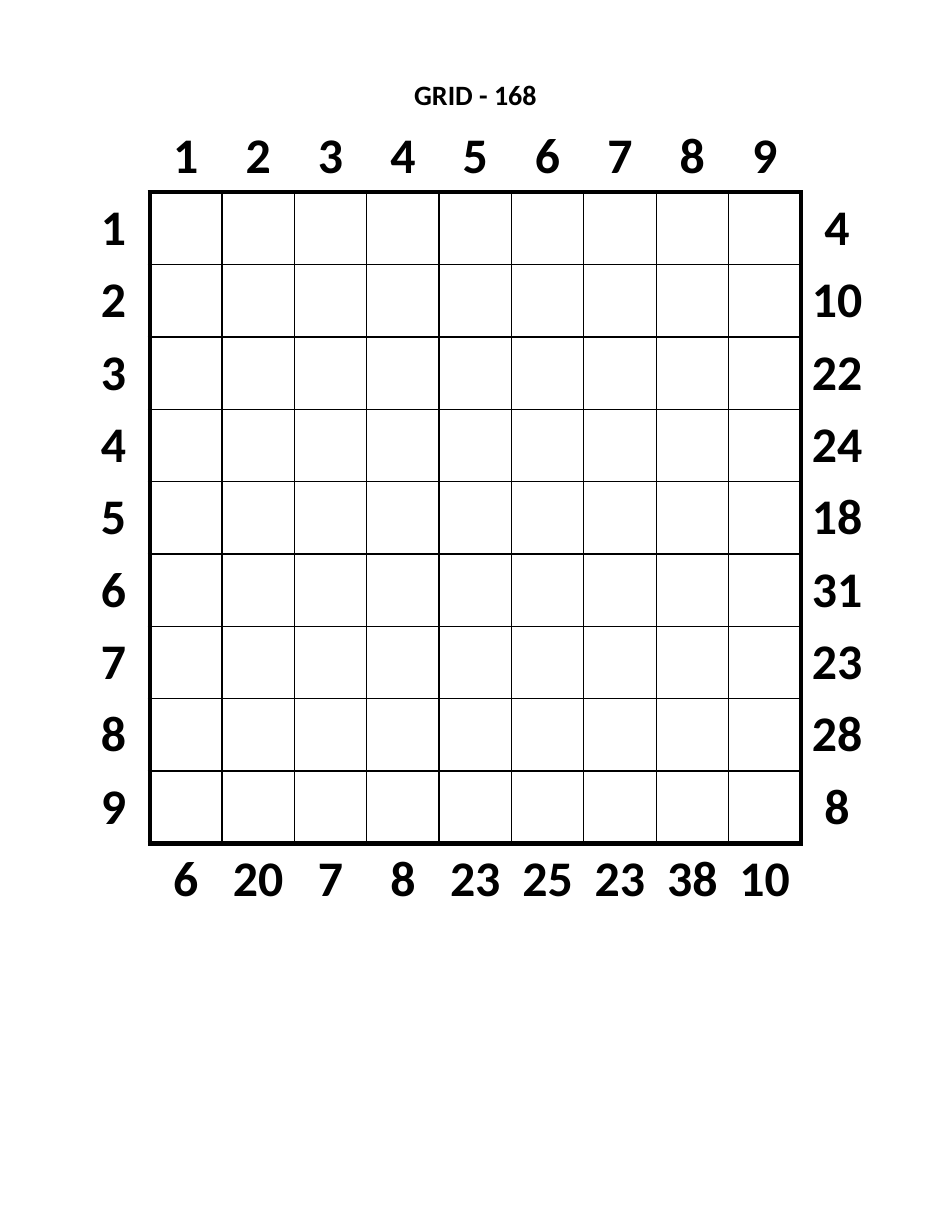
from dataclasses import dataclass
from lxml.etree import SubElement
from pptx import Presentation
from pptx.dml.color import RGBColor
from pptx.enum.text import MSO_ANCHOR, MSO_AUTO_SIZE, PP_ALIGN
from pptx.oxml.ns import qn
from pptx.util import Inches, Pt


@dataclass(frozen=True)
class Theme:
    font: str = "Calibri"
    ink: str = "000000"
    paper: str = "FFFFFF"
    head: int = 18
    label: int = 32
    thin: int = 1
    thick: int = 3


def write(frame, text, font, size, color, bold=True, align=PP_ALIGN.CENTER):
    line = frame.paragraphs[0]
    line.alignment = align
    run = line.add_run()
    run.text = text
    run.font.name = font
    run.font.size = Pt(size)
    run.font.bold = bold
    run.font.color.rgb = RGBColor.from_string(color)


def clear(box):
    box.margin_left = box.margin_right = box.margin_top = box.margin_bottom = 0


class Sheet:
    sides = {"L": (0, -1), "R": (0, 1), "T": (-1, 0), "B": (1, 0)}

    def __init__(self, slide, theme):
        self.slide = slide
        self.theme = theme

    def title(self, text, left, top, width, height):
        shape = self.slide.shapes.title
        shape.left, shape.top = Inches(left), Inches(top)
        shape.width, shape.height = Inches(width), Inches(height)
        frame = shape.text_frame
        clear(frame)
        frame.word_wrap = True
        frame.auto_size = MSO_AUTO_SIZE.NONE
        frame.vertical_anchor = MSO_ANCHOR.TOP
        write(frame, text, self.theme.font, self.theme.head, self.theme.ink)

    def border(self, cell, side, width):
        props = cell._tc.get_or_add_tcPr()
        line = SubElement(props, qn(f"a:ln{side}"), w=str(Pt(width)))
        if width:
            fill = SubElement(line, qn("a:solidFill"))
            SubElement(fill, qn("a:srgbClr"), val=self.theme.ink)
        else:
            SubElement(line, qn("a:noFill"))

    def grid(self, rows, left, top, size):
        count = len(rows)
        table = self.slide.shapes.add_table(
            count, count, Inches(left), Inches(top), Inches(size), Inches(size)
        ).table
        table.first_row = table.horz_banding = False
        widths = (0, self.theme.thick, self.theme.thin)

        def inner(row, col):
            return 0 < row < count - 1 and 0 < col < count - 1

        for row, texts in enumerate(rows):
            for col, text in enumerate(texts):
                cell = table.cell(row, col)
                clear(cell)
                cell.vertical_anchor = MSO_ANCHOR.MIDDLE
                for side, (down, right) in self.sides.items():
                    both = inner(row, col) + inner(row + down, col + right)
                    self.border(cell, side, widths[both])
                cell.fill.solid()
                cell.fill.fore_color.rgb = RGBColor.from_string(self.theme.paper)
                if text:
                    write(cell.text_frame, text, self.theme.font,
                          self.theme.label, self.theme.ink)


def main():
    deck = Presentation()
    deck.slide_width, deck.slide_height = Inches(8.5), Inches(11)
    sheet = Sheet(deck.slides.add_slide(deck.slide_layouts[5]), Theme())

    across = [4, 10, 22, 24, 18, 31, 23, 28, 8]
    down = [6, 20, 7, 8, 23, 25, 23, 38, 10]
    blank = [""] * len(down)
    rows = [["", *map(str, range(1, len(down) + 1)), ""]]
    rows += [[str(row), *blank, str(total)] for row, total in enumerate(across, 1)]
    rows.append(["", *map(str, down), ""])

    sheet.title("GRID - 168", 0.69, 0.69, 7.11, 0.3)
    sheet.grid(rows, 0.69, 1.07, 7.11)
    deck.save("out.pptx")


if __name__ == "__main__":
    main()
